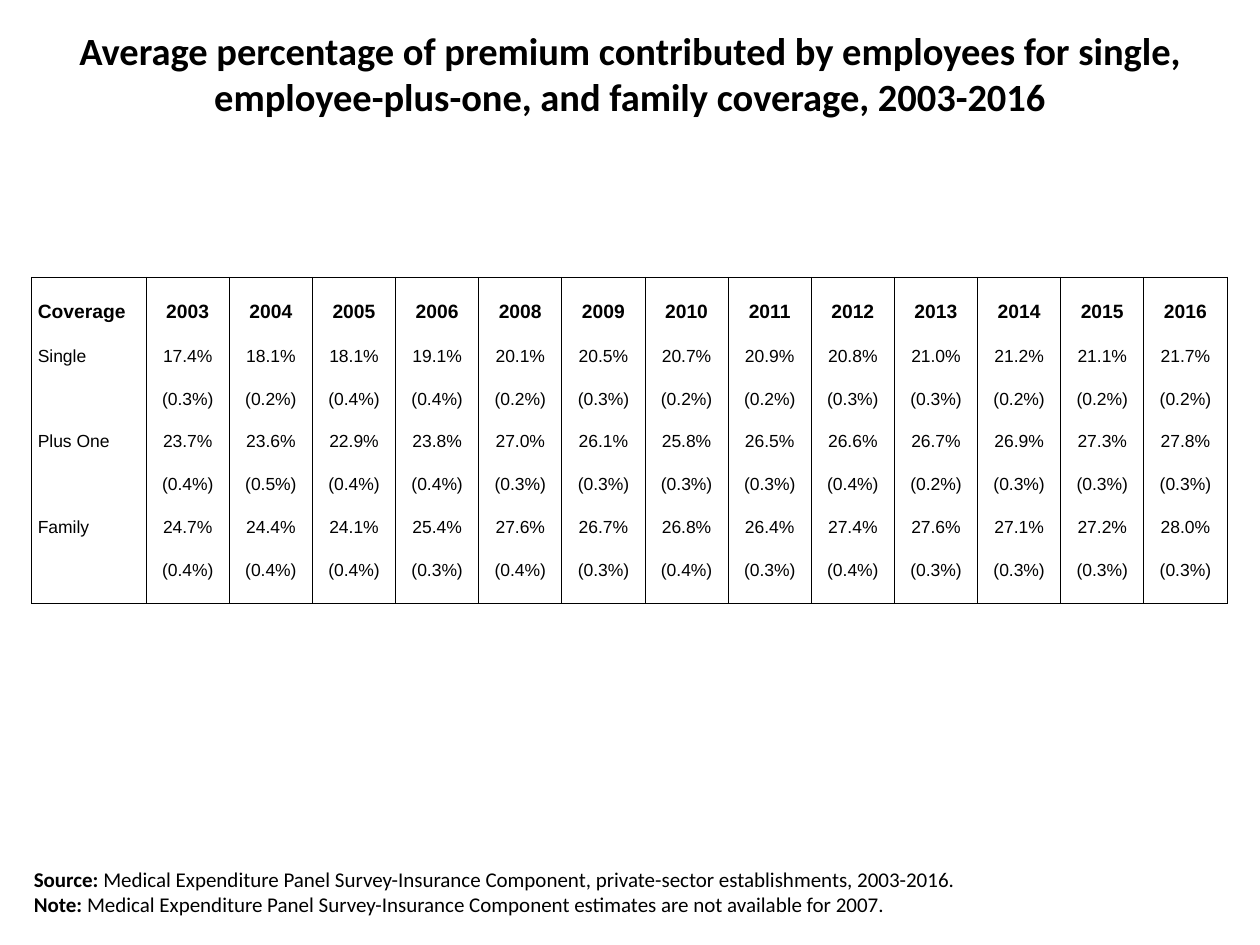
import pptx
import pptx.dml.color
import pptx.enum.text
import pptx.oxml
import pptx.oxml.ns
import pptx.util
from pptx.util import Inches

COLORS = {"ink": "000000"}
ALIGN = pptx.enum.text.PP_ALIGN
ANCHOR = pptx.enum.text.MSO_ANCHOR

TITLE = ("Average percentage of premium contributed by employees for single, "
         "employee-plus-one, and family coverage, 2003-2016")
YEARS = [year for year in range(2003, 2017) if year != 2007]
COVERAGE = {
    "Single": (
        [17.4, 18.1, 18.1, 19.1, 20.1, 20.5, 20.7, 20.9, 20.8, 21.0, 21.2, 21.1, 21.7],
        [0.3, 0.2, 0.4, 0.4, 0.2, 0.3, 0.2, 0.2, 0.3, 0.3, 0.2, 0.2, 0.2]),
    "Plus One": (
        [23.7, 23.6, 22.9, 23.8, 27.0, 26.1, 25.8, 26.5, 26.6, 26.7, 26.9, 27.3, 27.8],
        [0.4, 0.5, 0.4, 0.4, 0.3, 0.3, 0.3, 0.3, 0.4, 0.2, 0.3, 0.3, 0.3]),
    "Family": (
        [24.7, 24.4, 24.1, 25.4, 27.6, 26.7, 26.8, 26.4, 27.4, 27.6, 27.1, 27.2, 28.0],
        [0.4, 0.4, 0.4, 0.3, 0.4, 0.3, 0.4, 0.3, 0.4, 0.3, 0.3, 0.3, 0.3]),
}
FOOTNOTES = [
    ("Source: ", "Medical Expenditure Panel Survey-Insurance Component, "
                 "private-sector establishments, 2003-2016."),
    ("Note: ", "Medical Expenditure Panel Survey-Insurance Component "
               "estimates are not available for 2007."),
]


def write(paragraph, text, size=10, font="Arial", bold=False, align=ALIGN.LEFT):
    """Append a formatted run to a paragraph."""
    paragraph.alignment = align
    run = paragraph.add_run()
    run.text = text
    run.font.size = pptx.util.Pt(size)
    run.font.name = font
    run.font.bold = bold
    run.font.color.rgb = pptx.dml.color.RGBColor.from_string(COLORS["ink"])


def set_borders(cell, visible_sides):
    """Draw thin lines on the named sides of a cell and clear the others."""
    properties = cell._tc.get_or_add_tcPr()
    line = f'<a:solidFill><a:srgbClr val="{COLORS["ink"]}"/></a:solidFill>'
    for side in "LRTB":
        paint = line if side in visible_sides else "<a:noFill/>"
        properties.append(pptx.oxml.parse_xml(
            f'<a:ln{side} {pptx.oxml.ns.nsdecls("a")} w="6350">{paint}</a:ln{side}>'))


def table_rows():
    """Return the table text, with a standard error row under each estimate row."""
    rows = [["Coverage", *map(str, YEARS)]]
    for coverage, (shares, errors) in COVERAGE.items():
        rows.append([coverage, *(f"{share:.1f}%" for share in shares)])
        rows.append(["", *(f"({error:.1f}%)" for error in errors)])
    return rows


def fill_cell(cell, text, is_header, is_label, is_last):
    """Format one table cell and write its text."""
    cell.margin_left = cell.margin_right = cell.margin_top = cell.margin_bottom = 0
    cell.vertical_anchor = ANCHOR.MIDDLE if is_header else ANCHOR.TOP
    set_borders(cell, "LR" + "T" * is_header + "B" * is_last)
    cell.fill.background()
    paragraph = cell.text_frame.paragraphs[0]
    if is_label:
        paragraph._p.get_or_add_pPr().set("marL", str(Inches(0.05)))
    if text:
        write(paragraph, text, size=11 if is_header else 10, bold=is_header,
              align=ALIGN.LEFT if is_label else ALIGN.CENTER)


def add_premium_table(slide):
    """Add the table of employee contributions by coverage and year."""
    rows = table_rows()
    table = slide.shapes.add_table(len(rows), len(rows[0]), Inches(0.25), Inches(2.2),
                                   Inches(9.5), Inches(2.59)).table
    table.first_row = table.horz_banding = False
    for index, column in enumerate(table.columns):
        column.width = Inches(0.66 if index else 0.91)
    for row_index, texts in enumerate(rows):
        table.rows[row_index].height = Inches(0.34 if row_index else 0.55)
        for column_index, text in enumerate(texts):
            fill_cell(table.cell(row_index, column_index), text, row_index == 0,
                      column_index == 0, row_index == len(rows) - 1)


def add_title(slide):
    """Place and write the slide title."""
    title = slide.shapes.title
    title.left, title.top = Inches(0.5), Inches(0.08)
    title.width, title.height = Inches(9), Inches(1)
    title.text_frame.auto_size = pptx.enum.text.MSO_AUTO_SIZE.NONE
    title.text_frame.vertical_anchor = ANCHOR.MIDDLE
    write(title.text_frame.paragraphs[0], TITLE, size=22, font="Calibri",
          bold=True, align=ALIGN.CENTER)


def add_footnotes(slide):
    """Add the source and note lines."""
    frame = slide.shapes.add_textbox(Inches(0.17), Inches(6.83),
                                     Inches(7.67), Inches(0.58)).text_frame
    frame.word_wrap = True
    for index, (label, statement) in enumerate(FOOTNOTES):
        paragraph = frame.add_paragraph() if index else frame.paragraphs[0]
        write(paragraph, label, size=12, font="Calibri", bold=True)
        write(paragraph, statement, size=12, font="Calibri")


def main():
    """Build and save the slide."""
    deck = pptx.Presentation()
    deck.slide_width, deck.slide_height = Inches(10), Inches(7.5)
    slide = deck.slides.add_slide(deck.slide_layouts.get_by_name("Title Only"))
    add_title(slide)
    add_premium_table(slide)
    add_footnotes(slide)
    deck.save("out.pptx")


if __name__ == "__main__":
    main()
